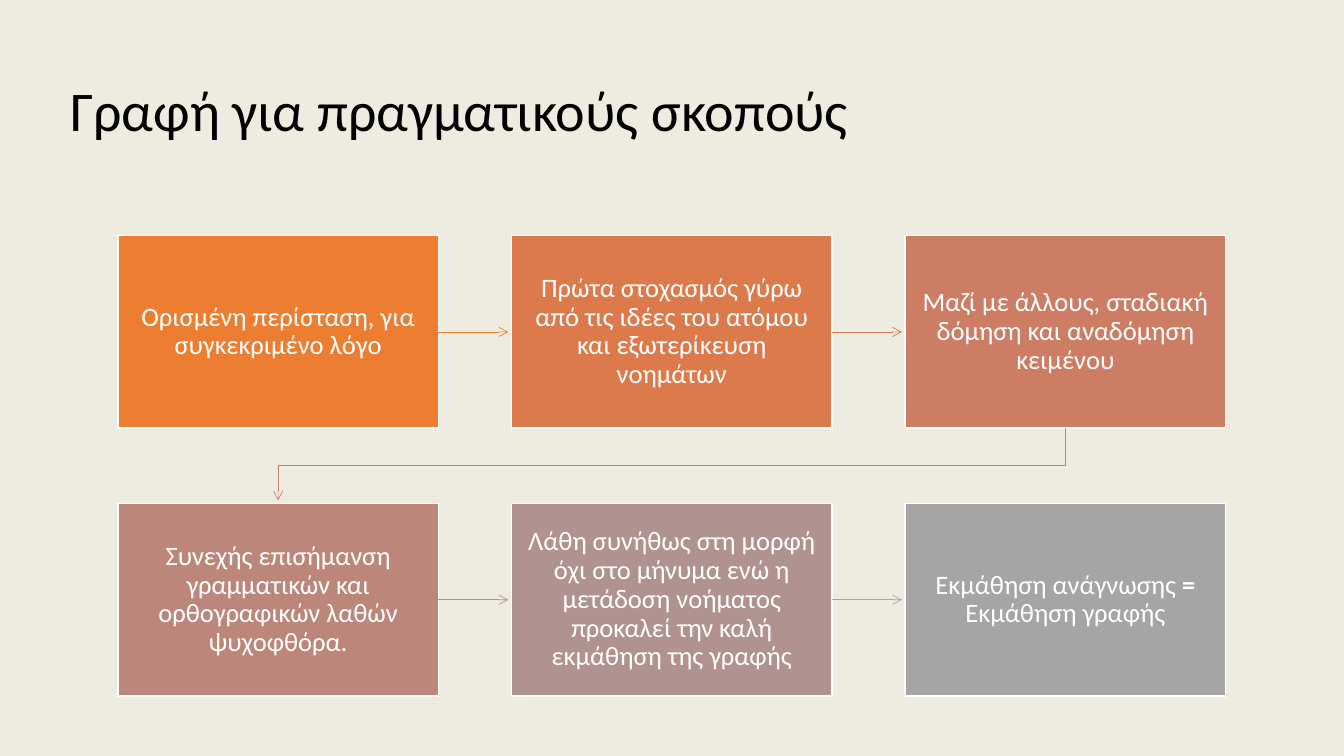
from dataclasses import dataclass

import pptx
import pptx.dml.color
import pptx.enum.shapes
import pptx.enum.text
import pptx.oxml
import pptx.oxml.ns
import pptx.util
from pptx.util import Cm, Pt

FONT = "Calibri"
SLIDE_WIDTH, SLIDE_HEIGHT = Cm(33.87), Cm(19.05)
COLUMNS = 3
LEFT, TOP = Cm(2.97), Cm(5.94)
BOX_WIDTH, BOX_HEIGHT = Cm(8.08), Cm(4.85)
COLUMN_PITCH, ROW_PITCH = Cm(9.92), Cm(6.75)
ARROW_CLEARANCE = Cm(0.08)
INSET = Cm(0.41)


@dataclass
class Step:
    text: str
    fill: str
    arrow: str = ""  # colour of the arrow to the next step
    bold: str = ""   # part of the text set in bold


STEPS = [
    Step("Ορισμένη περίσταση, για συγκεκριμένο λόγο", "ED7D31", "ED7D31"),
    Step("Πρώτα στοχασμός γύρω από τις ιδέες του ατόμου και εξωτερίκευση νοημάτων",
         "DC7A4B", "D87A51"),
    Step("Μαζί με άλλους, σταδιακή δόμηση και αναδόμηση κειμένου", "CC7D64", "C48170"),
    Step("Συνεχής επισήμανση γραμματικών και ορθογραφικών λαθών ψυχοφθόρα.",
         "BD867B", "B4908B"),
    Step("Λάθη συνήθως στη μορφή όχι στο μήνυμα ενώ η μετάδοση νοήματος "
         "προκαλεί την καλή εκμάθηση της γραφής", "B09391", "A5A5A5"),
    Step("Εκμάθηση ανάγνωσης = Εκμάθηση γραφής", "A5A5A5", bold="= "),
]


def rgb(value: str) -> pptx.dml.color.RGBColor:
    return pptx.dml.color.RGBColor.from_string(value)


def add_child(parent, tag: str, **attributes: str):
    child = pptx.oxml.parse_xml(f"<{tag} {pptx.oxml.ns.nsdecls('a')}/>")
    for name, value in attributes.items():
        child.set(name, value)
    parent.append(child)
    return child


def add_rectangle(slide, left: int, top: int, width: int, height: int, fill: str):
    rectangle = slide.shapes.add_shape(
        pptx.enum.shapes.MSO_SHAPE.RECTANGLE, left, top, width, height)
    rectangle.shadow.inherit = False
    rectangle.fill.solid()
    rectangle.fill.fore_color.rgb = rgb(fill)
    rectangle.line.fill.background()
    return rectangle


def style_paragraph(paragraph, size: int, color: str) -> None:
    paragraph.line_spacing = 0.9
    paragraph.font.name = FONT
    paragraph.font.size = Pt(size)
    paragraph.font.color.rgb = rgb(color)


def add_background(slide) -> None:
    add_rectangle(slide, 0, 0, SLIDE_WIDTH, SLIDE_HEIGHT, "F2F2F2")
    tint = add_rectangle(slide, 0, 0, SLIDE_WIDTH, SLIDE_HEIGHT, "BF9000")
    tint_color = tint.fill._xPr.find(".//" + pptx.oxml.ns.qn("a:srgbClr"))
    add_child(tint_color, "a:alpha", val="7000")


def add_title(slide, text: str) -> None:
    title = slide.shapes.add_textbox(Cm(1.52), Cm(1.02), Cm(30.81), Cm(3.68))
    frame = title.text_frame
    frame.word_wrap = True
    frame.vertical_anchor = pptx.enum.text.MSO_ANCHOR.MIDDLE
    frame.text = text
    style_paragraph(frame.paragraphs[0], 40, "000000")


def add_step(slide, index: int, step: Step):
    row, column = divmod(index, COLUMNS)
    box = add_rectangle(slide, LEFT + column * COLUMN_PITCH, TOP + row * ROW_PITCH,
                        BOX_WIDTH, BOX_HEIGHT, step.fill)
    box.line.color.rgb = rgb("FFFFFF")
    box.line.width = Pt(1)
    frame = box.text_frame
    frame.word_wrap = True
    frame.vertical_anchor = pptx.enum.text.MSO_ANCHOR.MIDDLE
    frame.margin_left = frame.margin_right = INSET
    frame.margin_top = frame.margin_bottom = INSET
    paragraph = frame.paragraphs[0]
    paragraph.alignment = pptx.enum.text.PP_ALIGN.CENTER
    style_paragraph(paragraph, 19, "FFFFFF")
    parts = step.text.partition(step.bold) if step.bold else (step.text,)
    for part in parts:
        run = paragraph.add_run()
        run.text = part
        if part == step.bold:
            run.font.bold = True
    return box


def style_arrow(arrow, color: str) -> None:
    arrow.line.color.rgb = rgb(color)
    arrow.line.width = Pt(0.5)
    add_child(arrow.line._get_or_add_ln(), "a:tailEnd", type="arrow")


def add_row_arrow(slide, source, target, color: str) -> None:
    middle = source.top + source.height // 2
    arrow = slide.shapes.add_connector(
        pptx.enum.shapes.MSO_CONNECTOR.STRAIGHT,
        source.left + source.width, middle, target.left - ARROW_CLEARANCE, middle)
    arrow.begin_connect(source, 3)
    style_arrow(arrow, color)
    add_child(arrow._element.spPr, "a:effectLst")


def add_turn_arrow(slide, source, target, color: str) -> None:
    start_x = source.left + source.width // 2
    end_x = target.left + target.width // 2
    start_y = source.top + source.height
    turn_y = (start_y + target.top) // 2
    builder = slide.shapes.build_freeform(start_x, start_y)
    builder.add_line_segments(
        [(start_x, turn_y), (end_x, turn_y), (end_x, target.top - ARROW_CLEARANCE)],
        close=False)
    arrow = builder.convert_to_shape()
    arrow.shadow.inherit = False
    arrow.fill.background()
    style_arrow(arrow, color)


def main() -> None:
    presentation = pptx.Presentation()
    presentation.slide_width, presentation.slide_height = SLIDE_WIDTH, SLIDE_HEIGHT
    slide = presentation.slides.add_slide(presentation.slide_layouts[6])

    # Background and title
    add_background(slide)
    add_title(slide, "Γραφή για πραγματικούς σκοπούς")

    # Steps of the process
    boxes = [add_step(slide, index, step) for index, step in enumerate(STEPS)]

    # Arrows along the rows, and the turn between them
    for step, source, target in zip(STEPS, boxes, boxes[1:]):
        add_arrow = add_row_arrow if source.top == target.top else add_turn_arrow
        add_arrow(slide, source, target, step.arrow)

    presentation.save("out.pptx")


if __name__ == "__main__":
    main()
